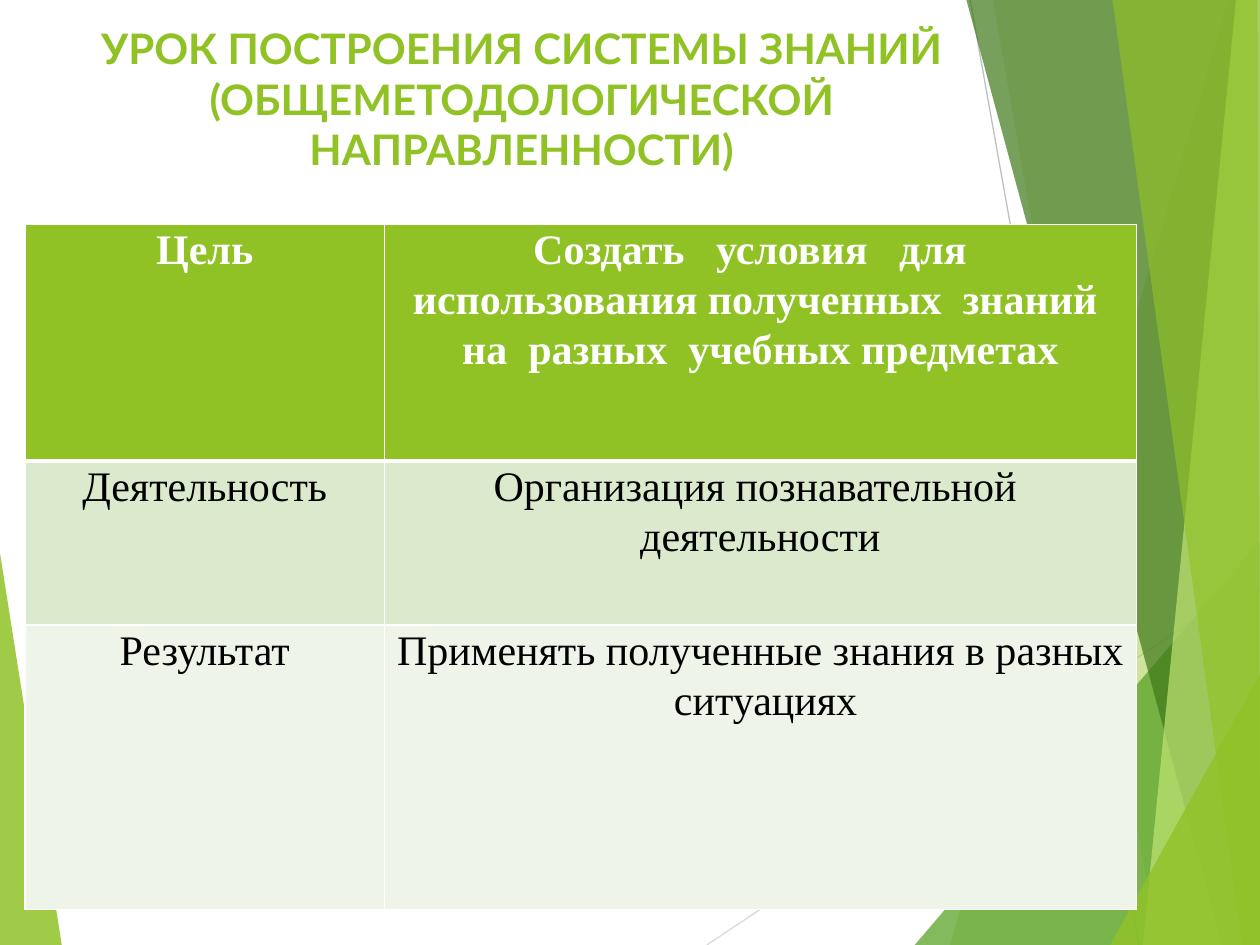
import pptx
import pptx.dml.color
import pptx.enum.text
import pptx.oxml
import pptx.oxml.ns
import pptx.util
from lxml import etree

EMU_PER_PX = 9144  # 100 px to the inch
WIDTH, HEIGHT = 1000, 750
COLORS = {
    "green": "90C226", "leaf": "54A021", "forest": "3F7819", "lime": "C0E474",
    "white": "FFFFFF", "black": "000000", "light line": "D9D9D9",
    "line": "BFBFBF", "band": "DBE9CD", "pale band": "EEF4E8",
}
# colour, opacity in percent, corners
FACETS = [
    ("green", 30, [(975, 0), (754, 750), (1000, 750), (1000, 0)]),
    ("green", 20, [(788, 0), (919, 750), (1000, 750), (1000, 0)]),
    ("leaf", 72, [(726, 750), (1000, 429), (1000, 750)]),
    ("forest", 70, [(767, 0), (970, 750), (1000, 750), (1000, 0)]),
    ("lime", 70, [(981, 0), (907, 750), (1000, 750), (1000, 0)]),
    ("green", 65, [(883, 0), (986, 750), (1000, 750), (998, 0)]),
    ("green", 80, [(881, 750), (1000, 535), (1000, 750)]),
]
TITLE = "УРОК ПОСТРОЕНИЯ СИСТЕМЫ ЗНАНИЙ (ОБЩЕМЕТОДОЛОГИЧЕСКОЙ НАПРАВЛЕННОСТИ)"
ROWS = [
    ("Цель", "Создать   условия   для   использования полученных  знаний  на  разных  учебных предметах"),
    ("Деятельность", "Организация познавательной  деятельности"),
    ("Результат", "Применять полученные знания в разных  ситуациях"),
]


def px(length):
    return pptx.util.Emu(length * EMU_PER_PX)


def rgb(name):
    return pptx.dml.color.RGBColor.from_string(COLORS[name])


def write_text(frame, text, font="Times New Roman", size=24, color="black",
               bold=False, spacing=None):
    frame.word_wrap = True
    paragraph = frame.paragraphs[0]
    paragraph.alignment = pptx.enum.text.PP_ALIGN.CENTER
    paragraph.line_spacing = spacing
    run = paragraph.add_run()
    run.text = text
    run.font.name = font
    run.font.size = pptx.util.Pt(size)
    run.font.bold = bold
    run.font.color.rgb = rgb(color)


def add_border(cell, side, width, color="white"):
    properties = cell._tc.get_or_add_tcPr()
    properties.append(pptx.oxml.parse_xml(
        f'<a:ln{side} {pptx.oxml.ns.nsdecls("a")} w="{pptx.util.Pt(width)}">'
        f'<a:solidFill><a:srgbClr val="{COLORS[color]}"/></a:solidFill></a:ln{side}>'))


class SlideBuilder:
    def __init__(self, slide):
        self.slide = slide

    def facet(self, color, opacity, corners):
        builder = self.slide.shapes.build_freeform(*corners[0], scale=EMU_PER_PX)
        builder.add_line_segments(corners[1:], close=True)
        shape = builder.convert_to_shape()
        shape.shadow.inherit = False
        shape.line.fill.background()
        shape.fill.solid()
        shape.fill.fore_color.rgb = rgb(color)
        color_element = shape._element.spPr.find(".//" + pptx.oxml.ns.qn("a:srgbClr"))
        etree.SubElement(color_element, pptx.oxml.ns.qn("a:alpha"), val=str(opacity * 1000))

    def line(self, start, end, color, width=0.75):
        connector = self.slide.shapes.add_connector(
            pptx.enum.shapes.MSO_CONNECTOR.STRAIGHT, *map(px, start + end))
        connector.line.color.rgb = rgb(color)
        connector.line.width = pptx.util.Pt(width)
        etree.SubElement(connector._element.spPr, pptx.oxml.ns.qn("a:effectLst"))

    def title(self, text, left, top, width, height):
        title = self.slide.shapes.title
        title.left, title.top, title.width, title.height = map(px, (left, top, width, height))
        frame = title.text_frame
        frame.auto_size = pptx.enum.text.MSO_AUTO_SIZE.NONE
        frame.vertical_anchor = pptx.enum.text.MSO_ANCHOR.TOP
        write_text(frame, text, font="Lato", color="green", bold=True)

    def table(self, rows, left, top, widths, heights, fills):
        """Add a table whose first row is a header with a thick rule below."""
        table = self.slide.shapes.add_table(
            len(rows), len(widths), px(left), px(top),
            px(sum(widths)), px(sum(heights))).table
        for column, width in zip(table.columns, widths):
            column.width = px(width)
        for index, (texts, height, fill) in enumerate(zip(rows, heights, fills)):
            table.rows[index].height = px(height)
            header = index == 0
            rules = {"L": 1, "R": 1, "T": 3 if index == 1 else 1, "B": 3 if header else 1}
            for cell, text in zip(table.rows[index].cells, texts):
                cell.margin_left = cell.margin_right = px(7)
                cell.margin_top = cell.margin_bottom = 0
                for side, width in rules.items():
                    add_border(cell, side, width)
                cell.fill.solid()
                cell.fill.fore_color.rgb = rgb(fill)
                write_text(cell.text_frame, text, color="white" if header else "black",
                           bold=header, spacing=1.07)


def main():
    presentation = pptx.Presentation()
    presentation.slide_width, presentation.slide_height = px(WIDTH), px(HEIGHT)
    title_only = presentation.slide_layouts[5]
    builder = SlideBuilder(presentation.slides.add_slide(title_only))

    builder.facet("green", 85, [(0, 439), (49, 750), (0, 750)])
    builder.line((561, 750), (1000, 457), "light line")
    builder.line((770, 0), (904, 750), "line")
    for facet in FACETS:
        builder.facet(*facet)
    builder.title(TITLE, 67, 13, 694, 150)
    builder.table(ROWS, 20, 178, widths=(285, 597), heights=(188, 130, 226),
                  fills=("green", "band", "pale band"))
    presentation.save("out.pptx")


if __name__ == "__main__":
    import pptx.enum.shapes
    main()
